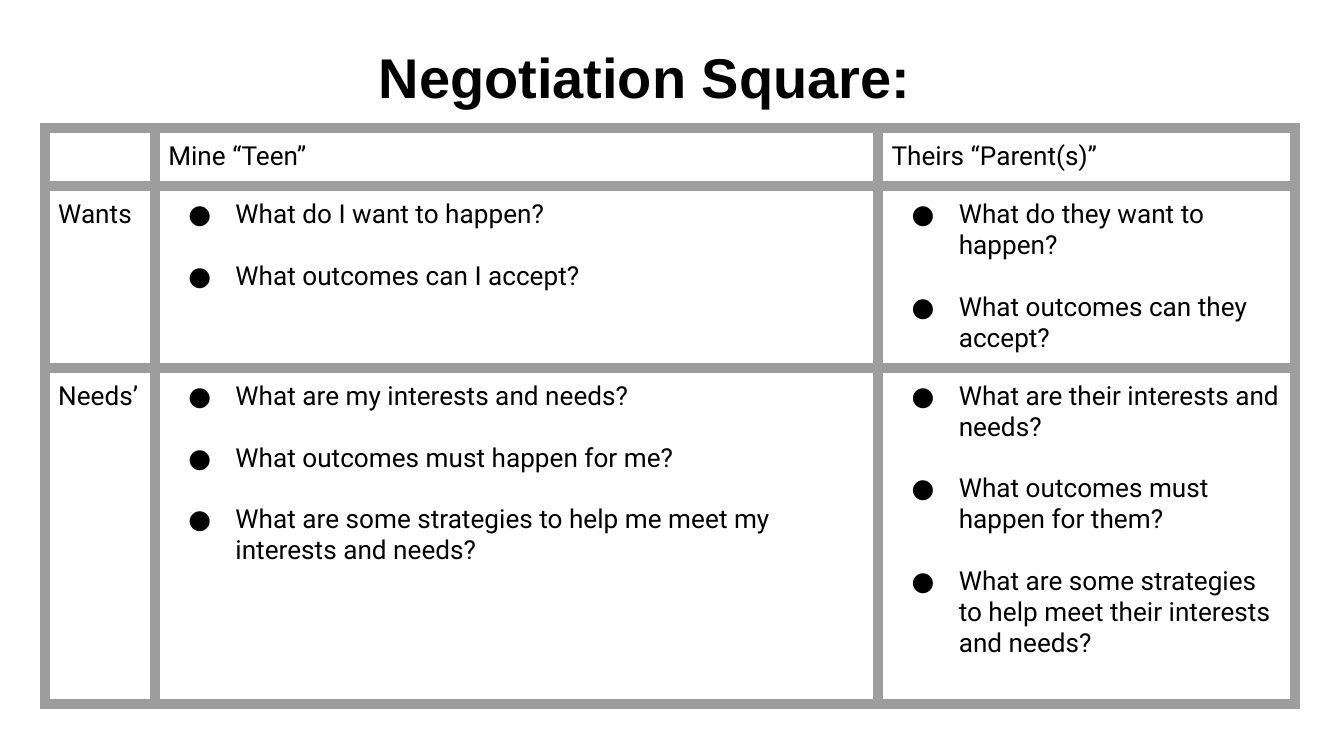
from lxml import etree
from pptx import Presentation
from pptx.dml.color import RGBColor
from pptx.enum.text import MSO_ANCHOR, MSO_AUTO_SIZE, PP_ALIGN
from pptx.oxml.ns import qn
from pptx.util import Cm, Pt

TOP = MSO_ANCHOR.TOP
CENTER = PP_ALIGN.CENTER
NO_FIT = MSO_AUTO_SIZE.NONE
TITLE_ONLY = 5

BLACK = "000000"
GRAY = "9E9E9E"
INSET = Cm(0.25)
TEXT_SIZE = Pt(14)
COL_WIDTHS = [2.08, 13.67, 7.87]
ROW_HEIGHTS = [1.09, 3.43, 6.35]

HEADERS = ["", "Mine “Teen”", "Theirs “Parent(s)”"]
QUESTIONS = [
    ("Wants",
     ["What do I want to happen?", "What outcomes can I accept?"],
     ["What do they want to happen?", "What outcomes can they accept?"]),
    ("Needs’",
     ["What are my interests and needs?",
      "What outcomes must happen for me?",
      "What are some strategies to help me meet my interests and needs?"],
     ["What are their interests and needs?",
      "What outcomes must happen for them?",
      "What are some strategies to help meet their interests and needs?"]),
]


def color(value):
    return RGBColor.from_string(value)


def format_run(r, font, size, bold=False):
    r.font.name = font
    r.font.size = size
    r.font.bold = bold
    r.font.color.rgb = color(BLACK)


def add_title(s, left, top, width, height):
    sp = s.shapes.title
    sp.left, sp.top, sp.width, sp.height = left, top, width, height
    tf = sp.text_frame
    tf.text = "Negotiation Square:"
    tf.word_wrap = True
    tf.auto_size = NO_FIT
    tf.vertical_anchor = TOP
    tf.margin_left = tf.margin_right = tf.margin_bottom = INSET
    tf.margin_top = Cm(0.38)
    p = tf.paragraphs[0]
    p.alignment = CENTER
    format_run(p.runs[0], "Arial", Pt(30), True)


def add_borders(cell, value, width):
    tcPr = cell._tc.get_or_add_tcPr()
    for side in ("lnL", "lnR", "lnT", "lnB"):
        ln = etree.SubElement(tcPr, qn(f"a:{side}"), w=str(width))
        fill = etree.SubElement(ln, qn("a:solidFill"))
        etree.SubElement(fill, qn("a:srgbClr"), val=value)


def add_bullet(p):
    pPr = p._p.get_or_add_pPr()
    pPr.set("marL", str(Cm(1.27)))
    pPr.set("indent", str(-Cm(0.89)))
    clr = etree.SubElement(pPr, qn("a:buClr"))
    etree.SubElement(clr, qn("a:srgbClr"), val=BLACK)
    etree.SubElement(pPr, qn("a:buFont"), typeface="Roboto")
    etree.SubElement(pPr, qn("a:buChar"), char="●")


def fill_cell(cell, content):
    add_borders(cell, GRAY, Pt(6))
    cell.fill.background()
    cell.vertical_anchor = TOP
    cell.margin_left = cell.margin_right = INSET
    cell.margin_top = cell.margin_bottom = INSET
    bulleted = isinstance(content, list)
    tf = cell.text_frame
    tf.text = "\n".join(content) if bulleted else content
    for i, p in enumerate(tf.paragraphs):
        if i:
            p.space_before = Pt(16.5)
        if bulleted:
            add_bullet(p)
        for r in p.runs:
            format_run(r, "Roboto", TEXT_SIZE)
        if not p.runs:
            etree.SubElement(p._p, qn("a:endParaRPr"), sz=str(TEXT_SIZE.centipoints))


def add_square(s, left, top, width, height):
    rows = [HEADERS, *QUESTIONS]
    table = s.shapes.add_table(len(rows), len(HEADERS), left, top, width, height).table
    table.first_row = table.horz_banding = False
    for column, share in zip(table.columns, COL_WIDTHS):
        column.width = int(width * share / sum(COL_WIDTHS))
    for row, share, contents in zip(table.rows, ROW_HEIGHTS, rows):
        row.height = int(height * share / sum(ROW_HEIGHTS))
        for cell, content in zip(row.cells, contents):
            fill_cell(cell, content)


def main():
    prs = Presentation()
    prs.slide_width, prs.slide_height = Cm(25.4), Cm(14.29)
    s = prs.slides.add_slide(prs.slide_layouts[TITLE_ONLY])
    add_square(s, Cm(0.85), Cm(2.42), Cm(23.62), Cm(10.87))
    add_title(s, Cm(2.84), Cm(0.43), Cm(18.69), Cm(1.65))
    prs.save("out.pptx")


if __name__ == "__main__":
    main()
